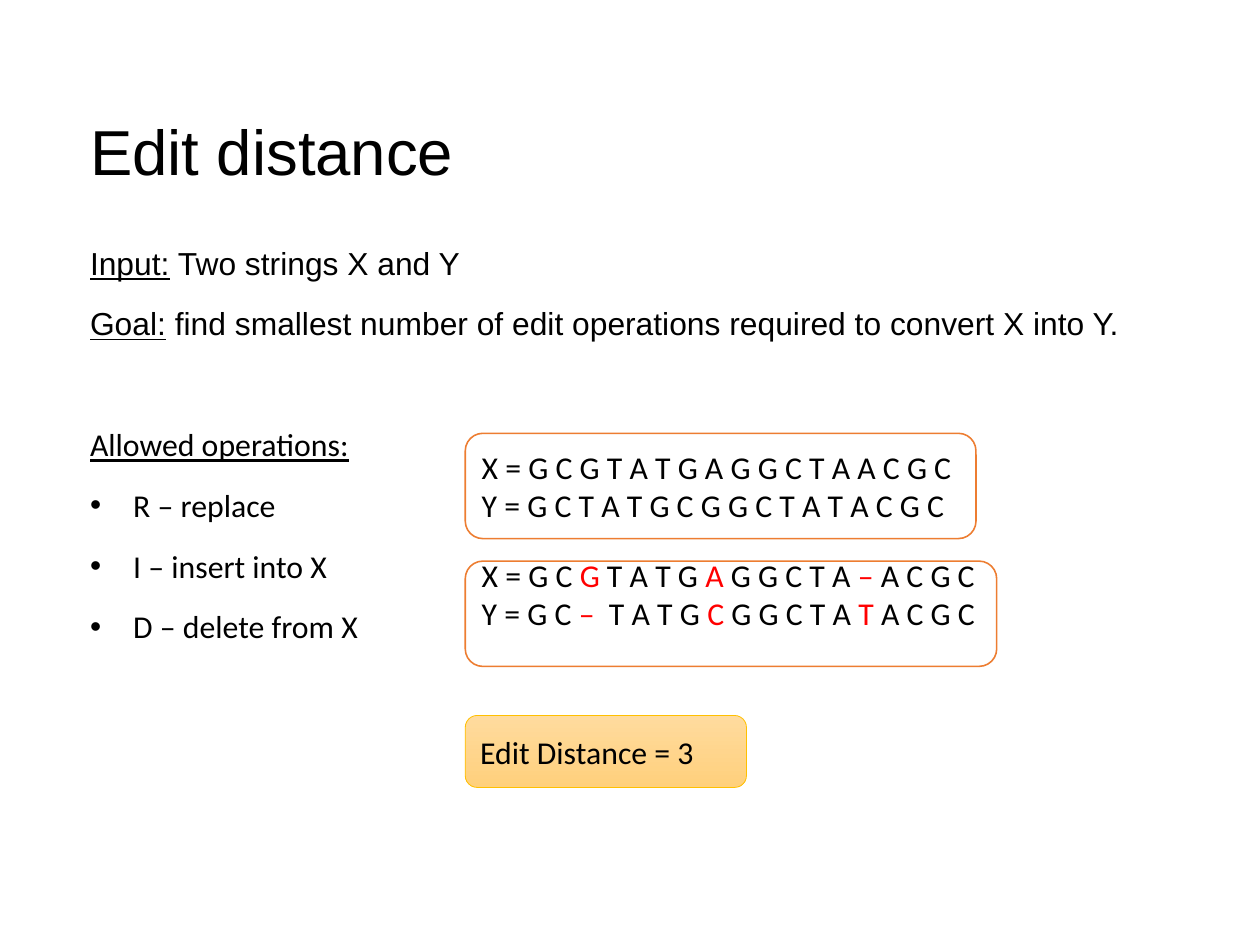
import pptx
import pptx.util
import pptx.dml.color
import pptx.enum.shapes
import pptx.enum.text
import pptx.oxml

Cm, Pt = pptx.util.Cm, pptx.util.Pt
ANCHOR = pptx.enum.text.MSO_ANCHOR
LEFT = pptx.enum.text.PP_ALIGN.LEFT
NS = 'xmlns:a="http://schemas.openxmlformats.org/drawingml/2006/main"'
COLORS = {"ink": "000000", "mark": "FF0000", "paper": "FFFFFF", "edge": "ED7D31",
          "gold": "FFC000", "light": "FFDB9E", "deep": "FFD07C"}
INTRO = ["|Input:| Two strings X and Y",
         "|Goal:| find smallest number of edit operations required to convert X into Y."]
HEAD = "|Allowed operations:|"
RULES = ["R – replace", "I – insert into X", "D – delete from X"]
PLAIN = ["X = G C G T A T G A G G C T A A C G C",
         "Y = G C T A T G C G G C T A T A C G C"]
ALIGNED = ["X = G C |G| T A T G |A| G G C T A |–| A C G C",
           "Y = G C |– | T A T G |C| G G C T A |T| A C G C"]


def rgb(name):
    return pptx.dml.color.RGBColor.from_string(COLORS[name])


def apply(item, values):
    for key, value in values.items():
        setattr(item, key, value)


def write(par, text, face="Calibri", size=20, under=False):
    """Fill a paragraph, marking the parts between bars in red or by underline."""
    for i, part in enumerate(text.split("|")):
        if part:
            run = par.add_run()
            run.text = part
            marked = i % 2 == 1
            apply(run.font, {"name": face, "size": Pt(size),
                             "underline": marked and under})
            run.font.color.rgb = rgb("mark" if marked and not under else "ink")
    par.alignment = LEFT


def lines(frame, count):
    return [frame.paragraphs[0]] + [frame.add_paragraph() for _ in range(count - 1)]


def place(holder, left, top, width, height, anchor):
    apply(holder, {"left": Cm(left), "top": Cm(top),
                   "width": Cm(width), "height": Cm(height)})
    apply(holder.text_frame, {
        "margin_left": 0, "margin_top": 0, "margin_right": 0, "margin_bottom": 0,
        "word_wrap": True, "vertical_anchor": anchor,
        "auto_size": pptx.enum.text.MSO_AUTO_SIZE.NONE})
    return holder.text_frame


def bullet(par, shown):
    props = par._p.get_or_add_pPr()
    indent = Cm(0.96) if shown else 0
    props.set("marL", str(indent))
    props.set("indent", str(-indent))
    tags = ['buFont typeface="Arial"', 'buChar char="•"'] if shown else ["buNone"]
    for tag in tags:
        props.append(pptx.oxml.parse_xml(f"<a:{tag} {NS}/>"))


def body(frame):
    texts = INTRO + [HEAD] + RULES
    for par, text in zip(lines(frame, len(texts)), texts):
        bullet(par, text in RULES)
        write(par, text, "Arial" if text in INTRO else "Calibri", under=True)
        apply(par, {"space_before": Pt(38 if text == HEAD else 0),
                    "space_after": Pt(14.2)})


def box(slide, top, width, height, texts, edge="edge", weight=1):
    shape = slide.shapes.add_shape(
        pptx.enum.shapes.MSO_SHAPE.ROUNDED_RECTANGLE,
        Cm(10.34), Cm(top), Cm(width), Cm(height))
    shape.shadow.inherit = False
    shape.fill.solid()
    shape.fill.fore_color.rgb = rgb("paper")
    shape.line.color.rgb = rgb(edge)
    shape.line.width = Pt(weight)
    frame = shape.text_frame
    apply(frame, {"word_wrap": True, "vertical_anchor": ANCHOR.MIDDLE})
    for par, text in zip(lines(frame, len(texts)), texts):
        write(par, text)
    return shape


def shade(shape):
    shape.fill.gradient()
    shape.fill.gradient_angle = 270
    for stop, name in zip(shape.fill.gradient_stops, ["light", "deep"]):
        stop.color.rgb = rgb(name)


def main():
    deck = pptx.Presentation()
    apply(deck, {"slide_width": Cm(28), "slide_height": Cm(21)})
    slide = deck.slides.add_slide(deck.slide_layouts[1])
    title, text = slide.placeholders
    frame = place(title, 2, 1.9, 23.5, 2.85, ANCHOR.MIDDLE)
    write(frame.paragraphs[0], "Edit distance", "Arial", 40)
    body(place(text, 2, 5.41, 24.6, 14.02, ANCHOR.TOP))
    box(slide, 9.63, 11.35, 2.34, PLAIN)
    pair = box(slide, 12.47, 11.81, 2.34, ALIGNED)
    apply(pair.text_frame, {"vertical_anchor": ANCHOR.TOP, "margin_top": Cm(-0.23)})
    shade(box(slide, 15.9, 6.25, 1.6, ["Edit Distance = 3"], "gold", 0.5))
    deck.save("out.pptx")


if __name__ == "__main__":
    main()
